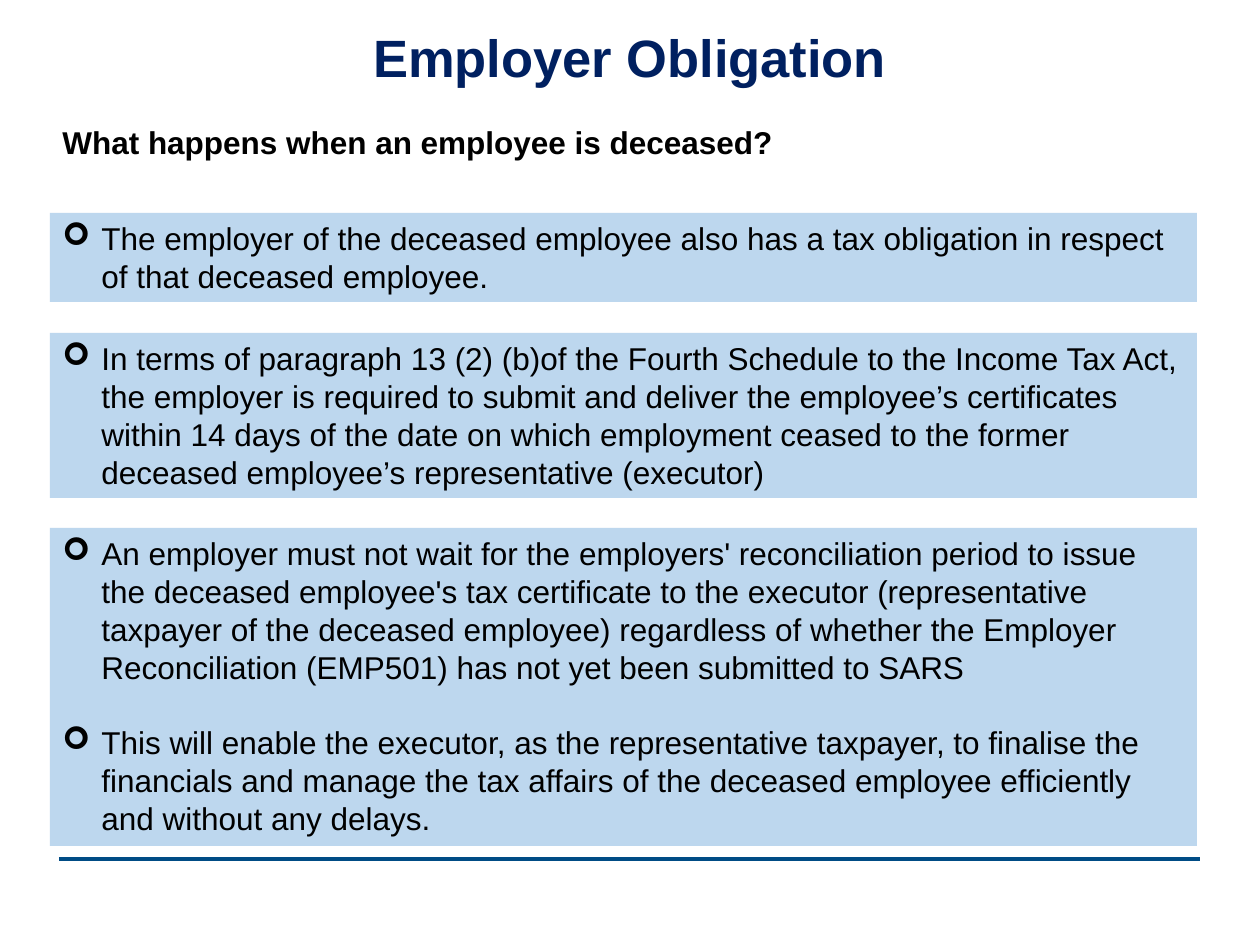
from lxml import etree
from pptx import Presentation
from pptx import util as u
from pptx.dml.color import RGBColor
from pptx.enum import shapes, text
from pptx.oxml.ns import qn

NAVY = RGBColor(0x00, 0x20, 0x60)
TEAL = RGBColor(0x00, 0x4C, 0x85)
PALE = RGBColor(0xBD, 0xD7, 0xEE)
BLACK = RGBColor(0, 0, 0)

TITLE = "Employer Obligation"
QUESTION = "What happens when an employee is deceased?"
# top, height, bullet points
PANELS = [
    (213, 89, [
        "The employer of the deceased employee also has a tax obligation in "
        "respect of that deceased employee.",
    ]),
    (333, 165, [
        "In terms of paragraph 13 (2) (b)of the Fourth Schedule to the Income "
        "Tax Act, the employer is required to submit and deliver the "
        "employee’s certificates within 14 days of the date on which "
        "employment ceased to the former deceased employee’s representative "
        "(executor)",
    ]),
    (528, 318, [
        "An employer must not wait for the employers' reconciliation period "
        "to issue the deceased employee's tax certificate to the executor "
        "(representative taxpayer of the deceased employee) regardless of "
        "whether the Employer Reconciliation (EMP501) has not yet been "
        "submitted to SARS",
        "This will enable the executor, as the representative taxpayer, to "
        "finalise the financials and manage the tax affairs of the deceased "
        "employee efficiently and without any delays.",
    ]),
]
LEFT, WIDE = 50, 1147
INDENT = 39
LINE = u.Pt(21.6)


def px(n):
    return round(n * 914400 / 126)


def style(para, size, color, bold=False):
    font = para.font
    font.name, font.size, font.bold = "Arial", u.Pt(size), bold
    font.color.rgb = color


def label(slide, words, box, size, color):
    frame = slide.shapes.add_textbox(*map(px, box)).text_frame
    frame.word_wrap = True
    frame.text = words
    style(frame.paragraphs[0], size, color, True)
    return frame


def bullet(para):
    props = para._p.get_or_add_pPr()
    props.set("marL", str(px(INDENT)))
    props.set("indent", str(-px(INDENT)))
    etree.SubElement(props, qn("a:buFont")).set("typeface", "Wingdings")
    etree.SubElement(props, qn("a:buChar")).set("char", "➢")


def panel(slide, top, high, points):
    box = slide.shapes.add_shape(
        shapes.MSO_SHAPE.RECTANGLE, px(LEFT), px(top), px(WIDE), px(high))
    box.shadow.inherit = False
    box.fill.solid()
    box.fill.fore_color.rgb = PALE
    box.line.fill.background()
    frame = box.text_frame
    frame.word_wrap = True
    frame.vertical_anchor = text.MSO_ANCHOR.TOP
    frame.text = "\n".join(points)
    for i, para in enumerate(frame.paragraphs):
        bullet(para)
        para.alignment = text.PP_ALIGN.LEFT
        para.line_spacing = LINE
        if i:
            para.space_before = LINE
        style(para, 18, BLACK)


def rule(slide):
    line = slide.shapes.add_connector(
        shapes.MSO_CONNECTOR.STRAIGHT, px(59), px(859), px(1200), px(859))
    line.line.color.rgb = TEAL
    line.line.width = u.Pt(2)
    etree.SubElement(line._element.spPr, qn("a:effectLst"))


def main():
    deck = Presentation()
    deck.slide_width, deck.slide_height = px(1260), px(945)
    slide = deck.slides.add_slide(deck.slide_layouts[6])
    rule(slide)

    title = label(slide, TITLE, (63, 24, 1134, 74), 30, NAVY)
    title.vertical_anchor = text.MSO_ANCHOR.MIDDLE
    title.paragraphs[0].alignment = text.PP_ALIGN.CENTER
    title.paragraphs[0].line_spacing = 0.9

    label(slide, QUESTION, (LEFT, 117, WIDE, 50), 18, BLACK)
    for top, high, points in PANELS:
        panel(slide, top, high, points)
    deck.save("out.pptx")


if __name__ == "__main__":
    main()
